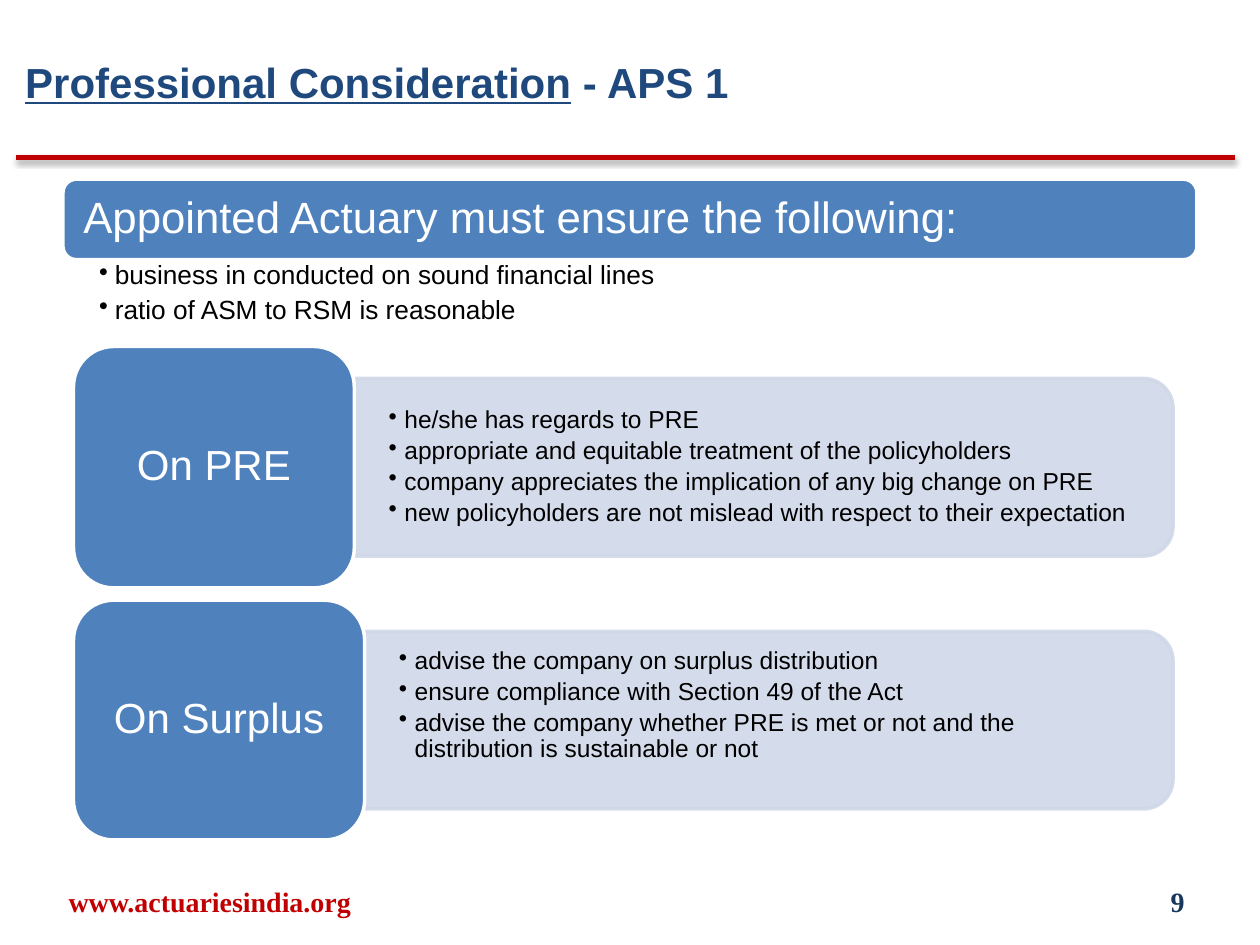
from lxml.etree import SubElement
from pptx import Presentation
from pptx.dml.color import RGBColor
from pptx.enum.shapes import MSO_CONNECTOR, MSO_SHAPE
from pptx.enum.text import MSO_ANCHOR, PP_ALIGN
from pptx.oxml.ns import qn
from pptx.util import Pt

BLUE, PALE, WHITE, BLACK = "4F81BD", "D0D8E8", "FFFFFF", "000000"
RED, NAVY, TITLE_BLUE = "C00000", "17375E", "1F497D"
PANEL_RIGHT, PANEL_HEIGHT = 670.3, 101.5


def rgb(value):
    return RGBColor.from_string(value)


def set_font(font, name, size, color, bold=False):
    font.name, font.size, font.bold = name, Pt(size), bold
    font.color.rgb = rgb(color)


def set_frame(frame, insets=(7.2, 3.6, 7.2, 3.6), anchor=MSO_ANCHOR.MIDDLE):
    frame.word_wrap = True
    frame.vertical_anchor = anchor
    (frame.margin_left, frame.margin_top,
     frame.margin_right, frame.margin_bottom) = map(Pt, insets)


def set_alpha(color_format, percent):
    """Make a solid fill or line partly transparent."""
    color = color_format._xFill.find(qn("a:srgbClr"))
    SubElement(color, qn("a:alpha"), val=str(percent * 1000))


def add_block(slide, kind, box, fill, line):
    block = slide.shapes.add_shape(kind, *map(Pt, box))
    block.shadow.inherit = False
    block.fill.solid()
    block.fill.fore_color.rgb = rgb(fill)
    block.line.color.rgb = rgb(line)
    block.line.width = Pt(2)
    return block


def add_label_block(slide, box, text, size, align, inset):
    block = add_block(slide, MSO_SHAPE.ROUNDED_RECTANGLE, box, BLUE, WHITE)
    set_frame(block.text_frame, (inset,) * 4)
    label = block.text_frame.paragraphs[0]
    label.text, label.alignment, label.line_spacing = text, align, 0.9
    set_font(label.font, "Arial", size, WHITE)


def add_bullets(slide, box, items, size, gap, insets, anchor):
    frame = slide.shapes.add_textbox(*map(Pt, box)).text_frame
    set_frame(frame, insets, anchor)
    for index, item in enumerate(items):
        bullet = frame.paragraphs[0] if index == 0 else frame.add_paragraph()
        bullet.text = item
        bullet.line_spacing, bullet.space_after = 0.9, Pt(gap)
        props = bullet._p.get_or_add_pPr()
        props.set("marL", str(Pt(9)))
        props.set("indent", str(Pt(-9)))
        SubElement(props, qn("a:buChar"), char="•")
        set_font(bullet.font, "Arial", size, BLACK)


def add_title(slide, box):
    title = slide.shapes.title
    title.left, title.top, title.width, title.height = map(Pt, box)
    set_frame(title.text_frame)
    heading = title.text_frame.paragraphs[0]
    heading.alignment = PP_ALIGN.LEFT
    for text, underlined in (("Professional Consideration", True), (" - APS 1", False)):
        run = heading.add_run()
        run.text, run.font.underline = text, underlined
    set_font(heading.font, "Arial", 24, TITLE_BLUE, True)


def add_rule(slide, left, right, y):
    rule = slide.shapes.add_connector(
        MSO_CONNECTOR.STRAIGHT, Pt(left), Pt(y), Pt(right), Pt(y))
    rule.line.color.rgb = rgb(RED)
    rule.line.width = Pt(3)
    effects = SubElement(rule._element.spPr, qn("a:effectLst"))
    shadow = SubElement(effects, qn("a:outerShdw"), blurRad=str(Pt(3.1)),
                        dist=str(Pt(1.6)), dir="5400000", rotWithShape="0")
    color = SubElement(shadow, qn("a:srgbClr"), val=BLACK)
    SubElement(color, qn("a:alpha"), val="38000")


def add_banner(slide, box, heading, items):
    """Heading bar with its list directly below."""
    left, top, width, height = box
    add_label_block(slide, box, heading, 25, PP_ALIGN.LEFT, 9.4)
    add_bullets(slide, (left, top + height, width, 37.5), items, 15, 3.5,
                (20.6, 1.4, 8.6, 1.4), MSO_ANCHOR.TOP)


def add_topic(slide, box, heading, items, bottom_inset):
    """Tile in the given box, with a panel reaching from it to the right."""
    left, top, width, height = box
    panel_left = left + width + 0.4
    panel_width = PANEL_RIGHT - panel_left
    middle = top + height / 2
    # A turned shape is placed by its unturned box around the same centre.
    center = panel_left + panel_width / 2
    panel = add_block(slide, MSO_SHAPE.ROUND_2_SAME_RECTANGLE,
                      (center - PANEL_HEIGHT / 2, middle - panel_width / 2,
                       PANEL_HEIGHT, panel_width), PALE, PALE)
    panel.rotation = 90
    set_alpha(panel.fill.fore_color, 90)
    set_alpha(panel.line.fill.fore_color, 90)
    add_bullets(slide, (panel_left, middle - 45.75, panel_width - 4, 91.5), items,
                14, 2.5, (19.2, 9.8, 19.2, bottom_inset), MSO_ANCHOR.MIDDLE)
    add_label_block(slide, box, heading, 24, PP_ALIGN.CENTER, 7.2)


def add_footer(slide, box, text, align, color):
    frame = slide.shapes.add_textbox(*map(Pt, box)).text_frame
    set_frame(frame)
    footer = frame.paragraphs[0]
    footer.text, footer.alignment = text, align
    set_font(footer.font, "Times New Roman", 16, color, True)


def main():
    deck = Presentation()
    deck.slide_width, deck.slide_height = Pt(720), Pt(540)
    slide = deck.slides.add_slide(deck.slide_layouts[5])
    add_rule(slide, 9.4, 705.6, 90)
    add_title(slide, (7.2, 1.5, 648, 90))
    add_banner(slide, (36, 102.4, 648, 46), "Appointed Actuary must ensure the following:", [
        "business in conducted on sound financial lines",
        "ratio of ASM to RSM is reasonable",
    ])
    add_topic(slide, (42, 198, 160.5, 138), "On PRE", [
        "he/she has regards to PRE",
        "appropriate and equitable treatment of the policyholders",
        "company appreciates the implication of any big change on PRE",
        "new policyholders are not mislead with respect to their expectation",
    ], 9.8)
    add_topic(slide, (42, 343, 166.4, 137), "On Surplus", [
        "advise the company on surplus distribution",
        "ensure compliance with Section 49 of the Act",
        "advise the company whether PRE is met or not and the distribution "
        "is sustainable or not",
    ], 26)
    add_footer(slide, (5.8, 500.4, 228.2, 28.8), "www.actuariesindia.org",
               PP_ALIGN.CENTER, RED)
    add_footer(slide, (516.2, 500.4, 167.8, 28.8), "9", PP_ALIGN.RIGHT, NAVY)
    deck.save("out.pptx")


if __name__ == "__main__":
    main()
